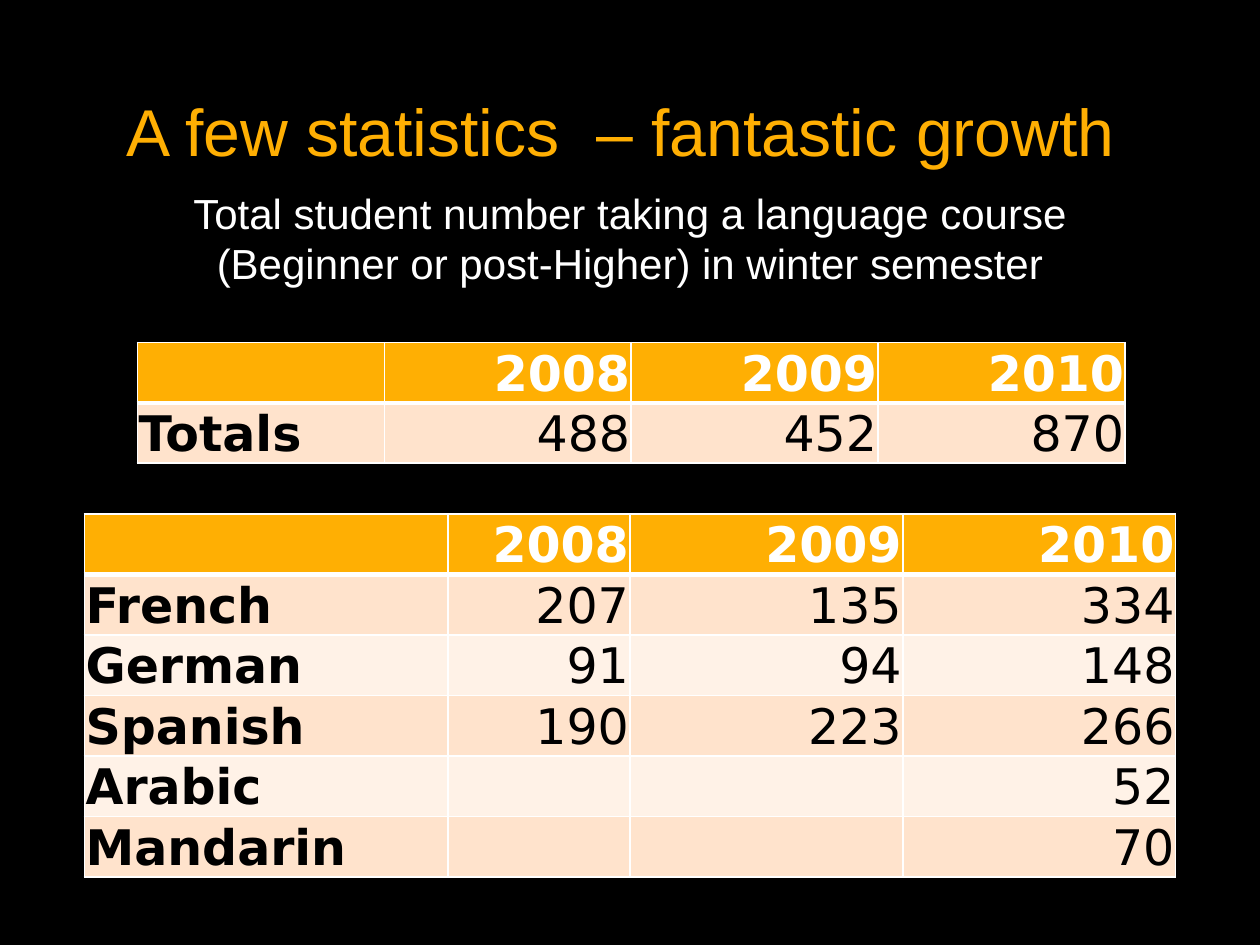
from lxml import etree
from pptx import Presentation
from pptx import util as u
from pptx.dml.color import RGBColor
from pptx.enum import text
from pptx.oxml import ns

WIDE, HIGH = 10, 7.5
GOLD, PEACH, CREAM = "FFAF03", "FFE3CC", "FFF2E7"
WHITE, BLACK = "FFFFFF", "000000"
YEARS = ["", "2008", "2009", "2010"]


def color(code):
    return RGBColor.from_string(code)


class Deck:
    def __init__(self):
        self.prs = Presentation()
        self.prs.slide_width = u.Inches(WIDE)
        self.prs.slide_height = u.Inches(HIGH)
        self.slide = self.prs.slides.add_slide(self.prs.slide_layouts[6])
        self.paint(self.slide.background.fill, BLACK)

    def paint(self, fill, code):
        fill.solid()
        fill.fore_color.rgb = color(code)

    def place(self, x, y, w, h):
        return [u.Inches(v * side) for v, side in zip((x, y, w, h), (WIDE, HIGH) * 2)]

    def words(self, frame, line, align, code, **style):
        para = frame.paragraphs[0]
        para.alignment = align
        run = para.add_run()
        run.text = line
        run.font.color.rgb = color(code)
        for name, value in style.items():
            setattr(run.font, name, value)

    def label(self, line, area, size, code):
        frame = self.slide.shapes.add_textbox(*self.place(*area)).text_frame
        frame.word_wrap = True
        frame.vertical_anchor = text.MSO_ANCHOR.MIDDLE
        self.words(frame, line, text.PP_ALIGN.CENTER, code, name="Arial", size=u.Pt(size))

    def edge(self, cell, **sides):
        props = cell._tc.get_or_add_tcPr()
        for spot, (side, width) in enumerate(sides.items()):
            line = etree.Element(ns.qn(f"a:ln{side}"), w=str(u.Pt(width)))
            fill = etree.SubElement(line, ns.qn("a:solidFill"))
            etree.SubElement(fill, ns.qn("a:srgbClr"), val=WHITE)
            props.insert(spot, line)

    def cell(self, cell, line, row, col, last):
        head = row == 0
        self.paint(cell.fill, GOLD if head else PEACH if row % 2 else CREAM)
        style = {
            "vertical_anchor": text.MSO_ANCHOR.BOTTOM,
            "margin_left": u.Inches(0.01),
            "margin_top": u.Inches(0.01),
            "margin_right": u.Inches(0.01),
            "margin_bottom": 0,
        }
        for name, value in style.items():
            setattr(cell, name, value)
        self.edge(cell, L=1, R=1, T=3 if row == 1 else 1, B=3 if head and not last else 1)
        if line:
            align = text.PP_ALIGN.RIGHT if col else text.PP_ALIGN.LEFT
            self.words(cell.text_frame, line, align, WHITE if head else BLACK,
                       name="DejaVu Sans", size=u.Pt(28), bold=head or col == 0)

    def table(self, rows, area, parts):
        box = self.place(*area)
        grid = self.slide.shapes.add_table(len(rows), len(parts), *box).table
        for col, part in zip(grid.columns, parts):
            col.width = int(box[2] * part / sum(parts))
        for r, row in enumerate(rows):
            for c, line in enumerate(row):
                self.cell(grid.cell(r, c), line, r, c, r == len(rows) - 1)


def main():
    deck = Deck()
    left, span = 0.67 / WIDE, 8.66 / WIDE
    deck.label("A few statistics  – fantastic growth ",
               (left, 0.6 / HIGH, span, 0.86 / HIGH), 37.8, GOLD)
    deck.table([YEARS, ["Totals", "488", "452", "870"]],
               (1.09 / WIDE, 2.72 / HIGH, 7.84 / WIDE, 0.93 / HIGH), [1, 1, 1, 1])
    deck.label("Total student number taking a language course "
               "(Beginner or post-Higher) in winter semester",
               (left, 1.43 / HIGH, span, 0.91 / HIGH), 24, WHITE)
    deck.table([
        YEARS,
        ["French", "207", "135", "334"],
        ["German", "91", "94", "148"],
        ["Spanish", "190", "223", "266"],
        ["Arabic", "", "", "52"],
        ["Mandarin", "", "", "70"],
    ], (left, 4.08 / HIGH, span, 2.88 / HIGH), [4, 2, 3, 3])
    deck.prs.save("out.pptx")


if __name__ == "__main__":
    main()
